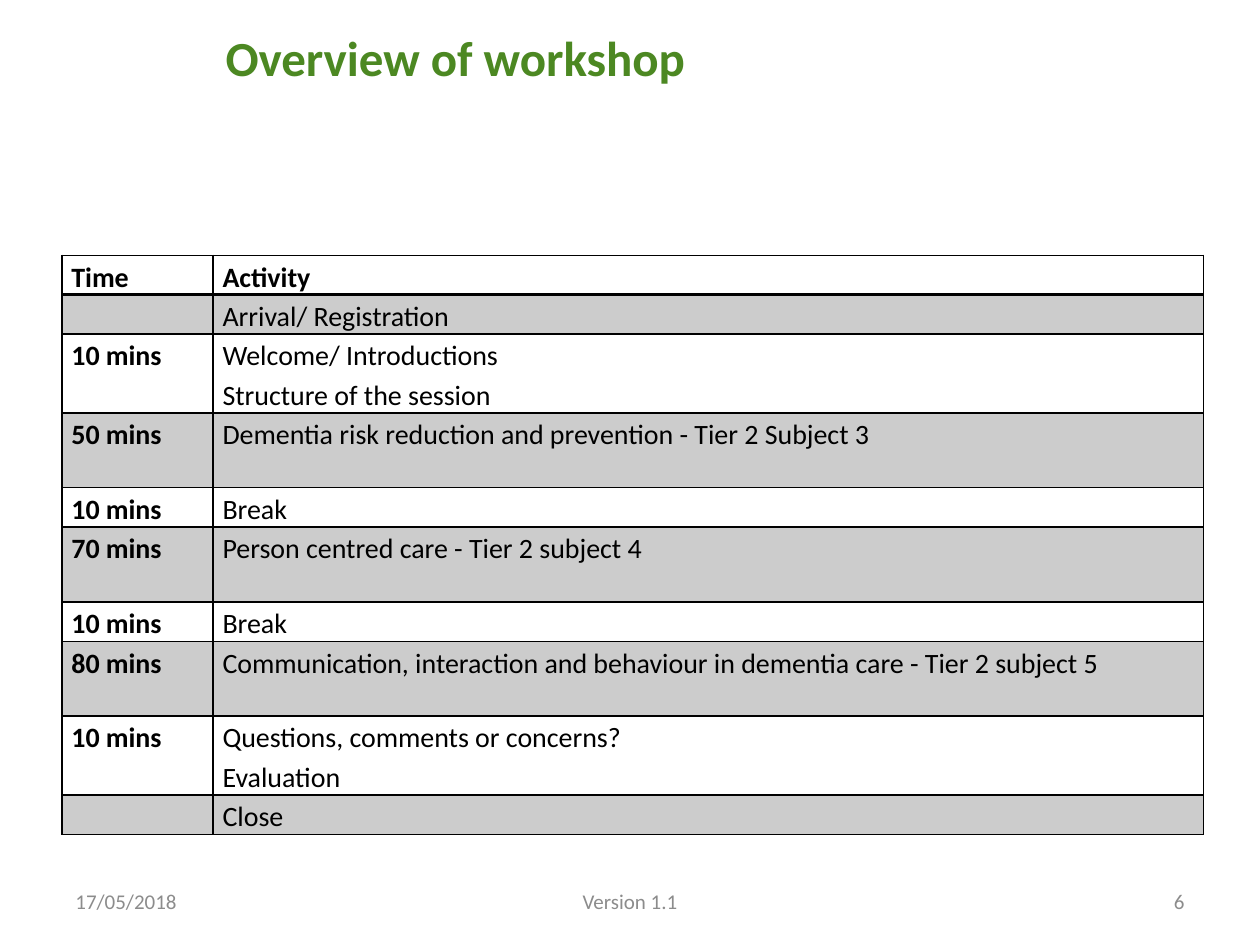
import pptx
import pptx.dml.color
import pptx.enum.text
import pptx.oxml
import pptx.oxml.ns
import pptx.util
from dataclasses import dataclass

Pt = pptx.util.Pt
Align = pptx.enum.text.PP_ALIGN
Anchor = pptx.enum.text.MSO_ANCHOR


@dataclass(frozen=True)
class Theme:
    font: str = "Calibri"
    title_color: str = "4C8822"
    text_color: str = "000000"
    footer_color: str = "8C8C8C"
    title_size: int = 28
    table_size: int = 16
    footer_size: int = 12


theme = Theme()


def write_text(frame, text, *, size, color, bold=False, align=Align.LEFT,
               anchor=Anchor.TOP, line_spacing=None):
    """Fill a text frame, one paragraph for each line of text."""
    frame.word_wrap = True
    frame.vertical_anchor = anchor
    for index, line in enumerate(text.split("\n")):
        paragraph = frame.paragraphs[0] if index == 0 else frame.add_paragraph()
        paragraph.alignment = align
        paragraph.line_spacing = line_spacing
        run = paragraph.add_run()
        run.text = line
        run.font.name = theme.font
        run.font.size = Pt(size)
        run.font.bold = bold
        run.font.color.rgb = pptx.dml.color.RGBColor.from_string(color)


def set_borders(cell, **widths):
    """Draw the left, right, top and bottom edges, given as L, R, T and B in points."""
    properties = cell._tc.get_or_add_tcPr()
    for index, side in enumerate("LRTB"):
        properties.insert(index, pptx.oxml.parse_xml(
            f'<a:ln{side} {pptx.oxml.ns.nsdecls("a")} w="{Pt(widths.get(side, 1))}">'
            f'<a:solidFill><a:srgbClr val="{theme.text_color}"/></a:solidFill>'
            f'</a:ln{side}>'))


presentation = pptx.Presentation()
presentation.slide_width, presentation.slide_height = Pt(720), Pt(540)
slide = presentation.slides.add_slide(presentation.slide_layouts[5])

title = slide.shapes.title
title.left, title.top, title.width, title.height = Pt(121.7), Pt(12.2), Pt(368.6), Pt(82)
title.text_frame.auto_size = pptx.enum.text.MSO_AUTO_SIZE.NONE
write_text(title.text_frame, "Overview of workshop", size=theme.title_size,
           color=theme.title_color, bold=True)

single, double, tall = 22.5, 45, 42.8
schedule = [
    ("Time", "Activity", single),
    ("", "Arrival/ Registration", single),
    ("10 mins", "Welcome/ Introductions\nStructure of the session", double),
    ("50 mins", "Dementia risk reduction and prevention - Tier 2 Subject 3", tall),
    ("10 mins", "Break", single),
    ("70 mins", "Person centred care - Tier 2 subject 4", tall),
    ("10 mins", "Break", single),
    ("80 mins", "Communication, interaction and behaviour in dementia care - Tier 2 subject 5", tall),
    ("10 mins", "Questions, comments or concerns?\nEvaluation", double),
    ("", "Close", single),
]
column_widths = [86.4, 566]
table = slide.shapes.add_table(
    len(schedule), len(column_widths), Pt(35.4), Pt(145.9), Pt(sum(column_widths)),
    Pt(sum(height for time, activity, height in schedule))).table
table.first_row = table.horz_banding = False
for column, width in zip(table.columns, column_widths):
    column.width = Pt(width)

for row_index, (time, activity, height) in enumerate(schedule):
    table.rows[row_index].height = Pt(height)
    for column_index, text in enumerate((time, activity)):
        cell = table.cell(row_index, column_index)
        cell.margin_left = cell.margin_right = Pt(5.4)
        cell.margin_top = cell.margin_bottom = 0
        if text:
            is_time = column_index == 0 and row_index > 0
            write_text(cell.text_frame, text, size=theme.table_size,
                       color=theme.text_color, bold=is_time or row_index == 0,
                       align=Align.JUSTIFY if is_time else Align.LEFT, line_spacing=1.15)
        if row_index % 2:
            cell.fill.solid()
            cell.fill.fore_color.rgb = pptx.dml.color.RGBColor.from_string(theme.text_color)
            color_element = cell._tc.tcPr.find(".//" + pptx.oxml.ns.qn("a:srgbClr"))
            color_element.append(pptx.oxml.parse_xml(
                f'<a:alpha {pptx.oxml.ns.nsdecls("a")} val="20000"/>'))
        else:
            cell.fill.background()
        set_borders(cell, T=2 if row_index == 1 else 1, B=2 if row_index == 0 else 1)

footers = [
    ("17/05/2018", 36, 168, Align.LEFT),
    ("Version 1.1", 246, 228, Align.CENTER),
    ("6", 516, 168, Align.RIGHT),
]
for text, left, width, align in footers:
    footer = slide.shapes.add_textbox(Pt(left), Pt(500.5), Pt(width), Pt(28.75))
    write_text(footer.text_frame, text, size=theme.footer_size, color=theme.footer_color,
               align=align, anchor=Anchor.MIDDLE)

presentation.save("out.pptx")
